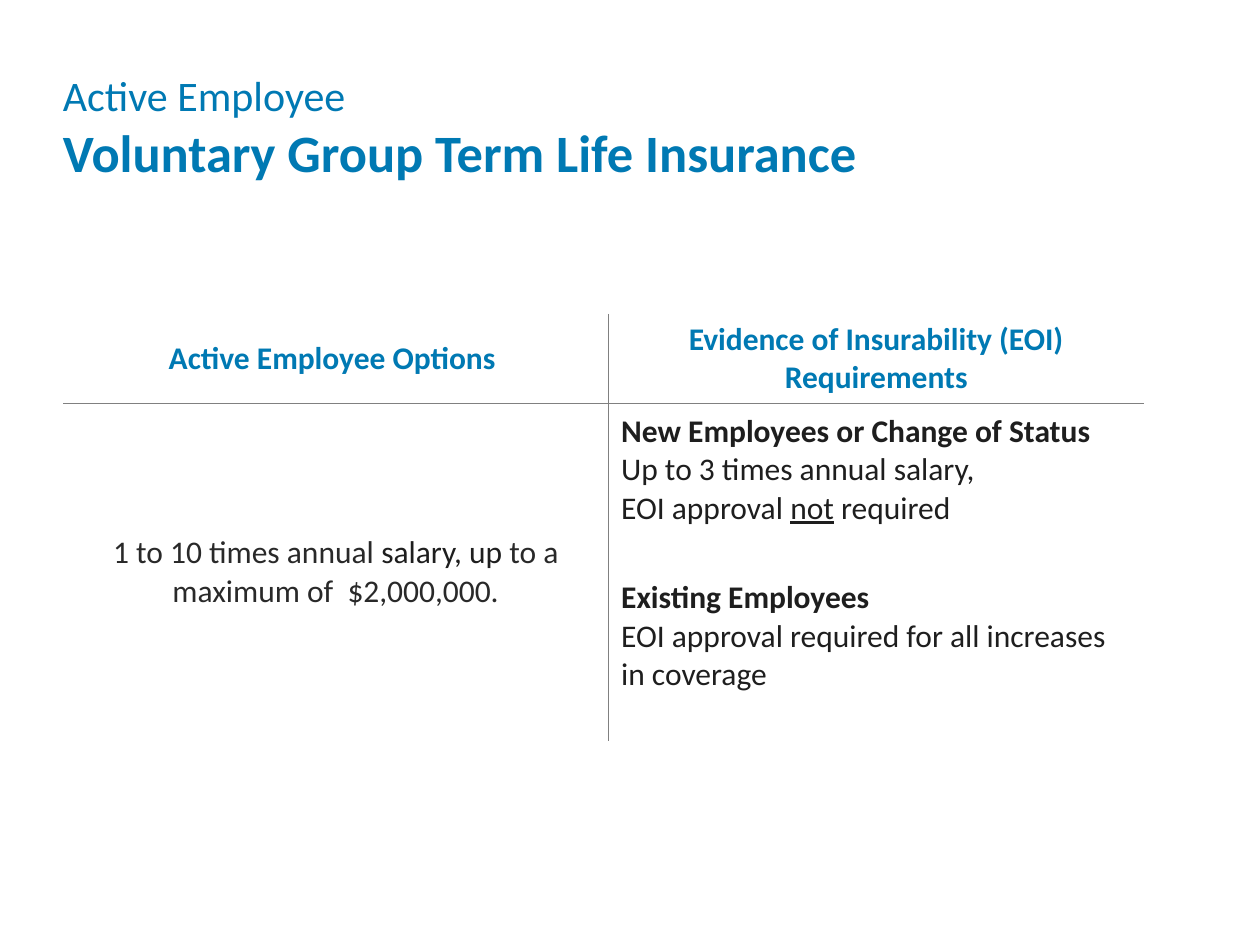
from lxml import etree
from pptx import Presentation, util as u
from pptx.dml.color import RGBColor
from pptx.enum import text
from pptx.oxml.ns import qn

COLORS = {"blue": "0079B3", "dark": "1E1E1E", "gray": "292929", "rule": "808080"}
FONT = "Calibri"
BREAK = ("\n", None, None, None)

TITLE = [
    ("Active Employee ", "blue", 24, ""), BREAK,
    ("Voluntary Group Term Life Insurance", "blue", 30, "bold"),
]
HEADERS = [
    [[("Active Employee Options ", "blue", 18, "bold")]],
    [[("Evidence of Insurability (EOI) Requirements", "blue", 18, "bold")]],
]
OPTIONS = [[
    ("1 to 10 times annual ", "gray", 18, ""),
    ("salary, up ", "dark", 18, ""),
    ("to a maximum of  $2,000,000.", "gray", 18, ""),
]]
REQUIREMENTS = [
    [
        ("New Employees or Change of Status", "dark", 18, "bold"), BREAK,
        ("Up to 3 times annual salary, ", "dark", 18, ""), BREAK,
        ("EOI approval ", "dark", 18, ""),
        ("not", "dark", 18, "underline"),
        (" required", "dark", 18, ""),
    ],
    [
        ("Existing Employees", "dark", 18, "bold"), BREAK,
        ("EOI approval required for all increases in coverage", "dark", 18, ""),
    ],
]
ROWS = [HEADERS, [OPTIONS, REQUIREMENTS]]
COLUMN_WIDTHS = [4.33, 4.25]
ROW_HEIGHTS = [0.7, 2.68]
LEFT = 0.5
PARAGRAPH_GAP = 29


def write_runs(paragraph, runs):
    for content, color, size, style in runs:
        if content == "\n":
            paragraph.add_line_break()
            continue
        run = paragraph.add_run()
        run.text = content
        run.font.name = FONT
        run.font.size = u.Pt(size)
        run.font.color.rgb = RGBColor.from_string(COLORS[color])
        run.font.bold = style == "bold"
        if style == "underline":
            run.font.underline = True


def set_borders(cell, visible):
    properties = cell._tc.get_or_add_tcPr()
    for position, side in enumerate("LRTB"):
        line = etree.Element(qn(f"a:ln{side}"), w=str(u.Pt(1)))
        if side in visible:
            fill = etree.SubElement(line, qn("a:solidFill"))
            etree.SubElement(fill, qn("a:srgbClr"), val=COLORS["rule"])
        else:
            etree.SubElement(line, qn("a:noFill"))
        properties.insert(position, line)


def add_title(slide):
    box = slide.shapes.add_textbox(u.Inches(LEFT), u.Inches(0.45), u.Inches(8.23), u.Inches(0.96))
    frame = box.text_frame
    frame.word_wrap = True
    frame.margin_left = frame.margin_right = frame.margin_top = frame.margin_bottom = 0
    paragraph = frame.paragraphs[0]
    paragraph.line_spacing = u.Pt(36.2)
    write_runs(paragraph, TITLE)


def add_benefit_table(slide):
    table = slide.shapes.add_table(
        len(ROWS), len(COLUMN_WIDTHS), u.Inches(LEFT), u.Inches(2.49),
        u.Inches(sum(COLUMN_WIDTHS)), u.Inches(sum(ROW_HEIGHTS))).table
    table.first_row = table.horz_banding = False
    for column, width in zip(table.columns, COLUMN_WIDTHS):
        column.width = u.Inches(width)
    for row, height in zip(table.rows, ROW_HEIGHTS):
        row.height = u.Inches(height)
    for row_index, row in enumerate(ROWS):
        for column_index, paragraphs in enumerate(row):
            cell = table.cell(row_index, column_index)
            cell.fill.background()
            set_borders(cell, "RL"[column_index] + "BT"[row_index])
            cell.vertical_anchor = text.MSO_ANCHOR.MIDDLE
            frame = cell.text_frame
            for index, runs in enumerate(paragraphs):
                paragraph = frame.add_paragraph() if index else frame.paragraphs[0]
                if index:
                    paragraph.space_before = u.Pt(PARAGRAPH_GAP)
                paragraph.alignment = (text.PP_ALIGN.LEFT if paragraphs is REQUIREMENTS
                                       else text.PP_ALIGN.CENTER)
                write_runs(paragraph, runs)
    table.cell(1, 1).margin_bottom = u.Inches(0.35)


def main():
    presentation = Presentation()
    presentation.slide_width = u.Inches(10)
    presentation.slide_height = u.Inches(7.5)
    slide = presentation.slides.add_slide(presentation.slide_layouts[6])
    add_benefit_table(slide)
    add_title(slide)
    presentation.save("out.pptx")


if __name__ == "__main__":
    main()
